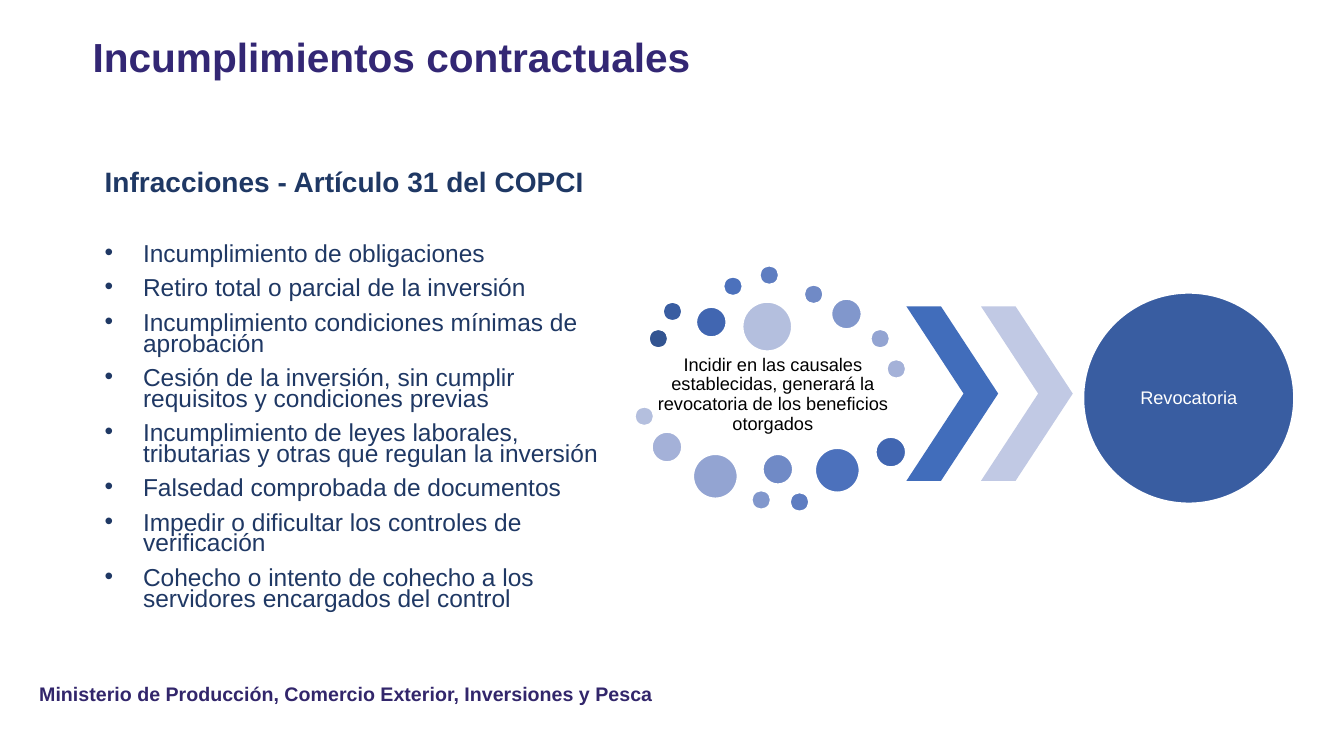
from lxml import etree
from pptx import Presentation, util as u
from pptx.dml.color import RGBColor
from pptx.enum import shapes, text
from pptx.oxml.ns import qn

COLORS = {"white": "FFFFFF", "black": "000000", "title": "332774",
          "footer": "32266B", "body": "1F3864", "circle": "395DA1",
          "arrow_dark": "416DBB", "arrow_light": "C1C9E4"}
DOT_SHADES = ["325491", "395DA1", "4166B1", "4C71BC", "5E7DC1",
              "708AC6", "8197CC", "93A4D2", "A4B1D8", "B4BFDE"]
DOT_SIZES = {"s": 0.2, "m": 0.31, "l": 0.45, "xl": 0.5}
UPPER_DOTS = [(0.14, 0.63, "s"), (0.28, 0.36, "s"), (0.61, 0.41, "m"),
              (0.88, 0.11, "s"), (1.24, 0, "s"), (1.68, 0.19, "s"),
              (1.95, 0.33, "m"), (2.34, 0.63, "s"), (2.5, 0.93, "s"),
              (1.07, 0.36, "xl")]
LOWER_DOTS = [(0, 1.4, "s"), (0.17, 1.65, "m"), (0.58, 1.87, "l"),
              (1.16, 2.23, "s"), (1.27, 1.87, "m"), (1.54, 2.25, "s"),
              (1.79, 1.81, "l"), (2.39, 1.7, "m")]
INFRACTIONS = [
    "Incumplimiento de obligaciones",
    "Retiro total o parcial de la inversión",
    "Incumplimiento condiciones mínimas de aprobación",
    "Cesión de la inversión, sin cumplir requisitos y condiciones previas",
    "Incumplimiento de leyes laborales, tributarias y otras que regulan la inversión",
    "Falsedad comprobada de documentos",
    "Impedir o dificultar los controles de verificación",
    "Cohecho o intento de cohecho a los servidores encargados del control"]


def rgb(color):
    """Turn a hex string into a colour."""
    return RGBColor.from_string(color)


def inches(box):
    """Turn left, top, width and height into lengths."""
    return [u.Inches(v) for v in box]


def add_run(p, words, size, color, bold=False):
    """Add one run in Arial."""
    r = p.add_run()
    r.text = words
    r.font.name, r.font.size, r.font.bold = "Arial", u.Pt(size), bold
    r.font.color.rgb = rgb(color)


def setup_frame(tf, inset=(0.1, 0.05), anchor=text.MSO_ANCHOR.MIDDLE):
    """Set wrapping, insets and anchor of a text frame."""
    tf.word_wrap, tf.vertical_anchor = True, anchor
    tf.margin_left = tf.margin_right = u.Inches(inset[0])
    tf.margin_top = tf.margin_bottom = u.Inches(inset[1])
    return tf


def add_line(s, box, words, size, color, bold=True):
    """Place a text box holding one paragraph and return the paragraph."""
    tf = setup_frame(s.shapes.add_textbox(*inches(box)).text_frame)
    p = tf.paragraphs[0]
    add_run(p, words, size, color, bold)
    return p


def add_filled(s, kind, box, color, outlined=True):
    """Place a filled preset shape, with a white outline if asked."""
    sp = s.shapes.add_shape(kind, *inches(box))
    sp.shadow.inherit = False
    sp.fill.solid()
    sp.fill.fore_color.rgb = rgb(color)
    if outlined:
        sp.line.color.rgb, sp.line.width = rgb(COLORS["white"]), u.Pt(2)
    else:
        sp.line.fill.background()
    return sp


def format_item(p, indent, hanging, before):
    """Set indents, spacing and, for a hanging indent, the bullet."""
    pPr = p._p.get_or_add_pPr()
    pPr.set("marL", str(u.Inches(indent)))
    pPr.set("indent", str(-u.Inches(hanging)))
    p.line_spacing, p.space_before = 0.7, u.Pt(before)
    if hanging:
        clr = etree.SubElement(pPr, qn("a:buClr"))
        etree.SubElement(clr, qn("a:srgbClr"), val=COLORS["body"])
        etree.SubElement(pPr, qn("a:buFont"), typeface="Arial")
        etree.SubElement(pPr, qn("a:buChar"), char="•")


def infractions(s, box):
    """Place the heading and its bulleted list."""
    tf = s.shapes.add_textbox(*inches(box)).text_frame
    setup_frame(tf, anchor=text.MSO_ANCHOR.TOP)
    tf.margin_top = u.Inches(0.5)
    p = tf.paragraphs[0]
    format_item(p, 0.12, 0, 0)
    add_run(p, "Infracciones - Artículo 31 del COPCI", 20, COLORS["body"], True)
    for i, item in enumerate(INFRACTIONS):
        p = tf.add_paragraph()
        format_item(p, 0.5, 0.38, 10 if i else 35)
        add_run(p, item, 17.5, COLORS["body"])


def dot_cloud(s, left, top):
    """Scatter the dots, shading darker to lighter and back."""
    lower_shades = DOT_SHADES[:1:-1]
    dots = zip(UPPER_DOTS + LOWER_DOTS, DOT_SHADES + lower_shades)
    for (x, y, size), shade in dots:
        d = DOT_SIZES[size]
        add_filled(s, shapes.MSO_SHAPE.OVAL, (left + x, top + y, d, d), shade)


def revocation(s, box):
    """Place the cause cloud, the two chevrons and the outcome circle."""
    left, top, width, height = box
    p = add_line(s, (left + 0.14, top + 0.88, 2.47, 0.81),
                 "Incidir en las causales establecidas, generará la "
                 "revocatoria de los beneficios otorgados",
                 13, COLORS["black"], False)
    setup_frame(s.shapes[-1].text_frame, (0.02, 0.02))
    p.alignment, p.line_spacing = text.PP_ALIGN.CENTER, 0.9
    dot_cloud(s, left, top)
    for i, shade in enumerate(("arrow_dark", "arrow_light")):
        sp = add_filled(s, shapes.MSO_SHAPE.CHEVRON,
                        (left + 2.7 + 0.74 * i, top + 0.41, 0.91, 1.73),
                        COLORS[shade], False)
        sp.adjustments[0] = 0.623
    d = 2.1
    sp = add_filled(s, shapes.MSO_SHAPE.OVAL,
                    (left + width - d, top + 0.27, d, d), COLORS["circle"])
    p = setup_frame(sp.text_frame, (0, 0)).paragraphs[0]
    p.alignment, p.line_spacing = text.PP_ALIGN.CENTER, 0.9
    add_run(p, "Revocatoria", 13, COLORS["white"])


def main():
    """Build and save the slide."""
    prs = Presentation()
    prs.slide_width, prs.slide_height = u.Inches(13.33), u.Inches(7.5)
    s = prs.slides.add_slide(prs.slide_layouts[6])
    add_line(s, (0.29, 6.71, 6.99, 0.34),
             "Ministerio de Producción, Comercio Exterior, Inversiones y Pesca",
             14, COLORS["footer"])
    p = add_line(s, (0.82, 0.18, 11.5, 0.81), "Incumplimientos contractuales",
                 29, COLORS["title"])
    p.line_spacing = 0.9
    infractions(s, (0.82, 1.22, 5.28, 5.49))
    revocation(s, (6.29, 2.63, 6.55, 2.45))
    prs.save("out.pptx")


if __name__ == "__main__":
    main()
